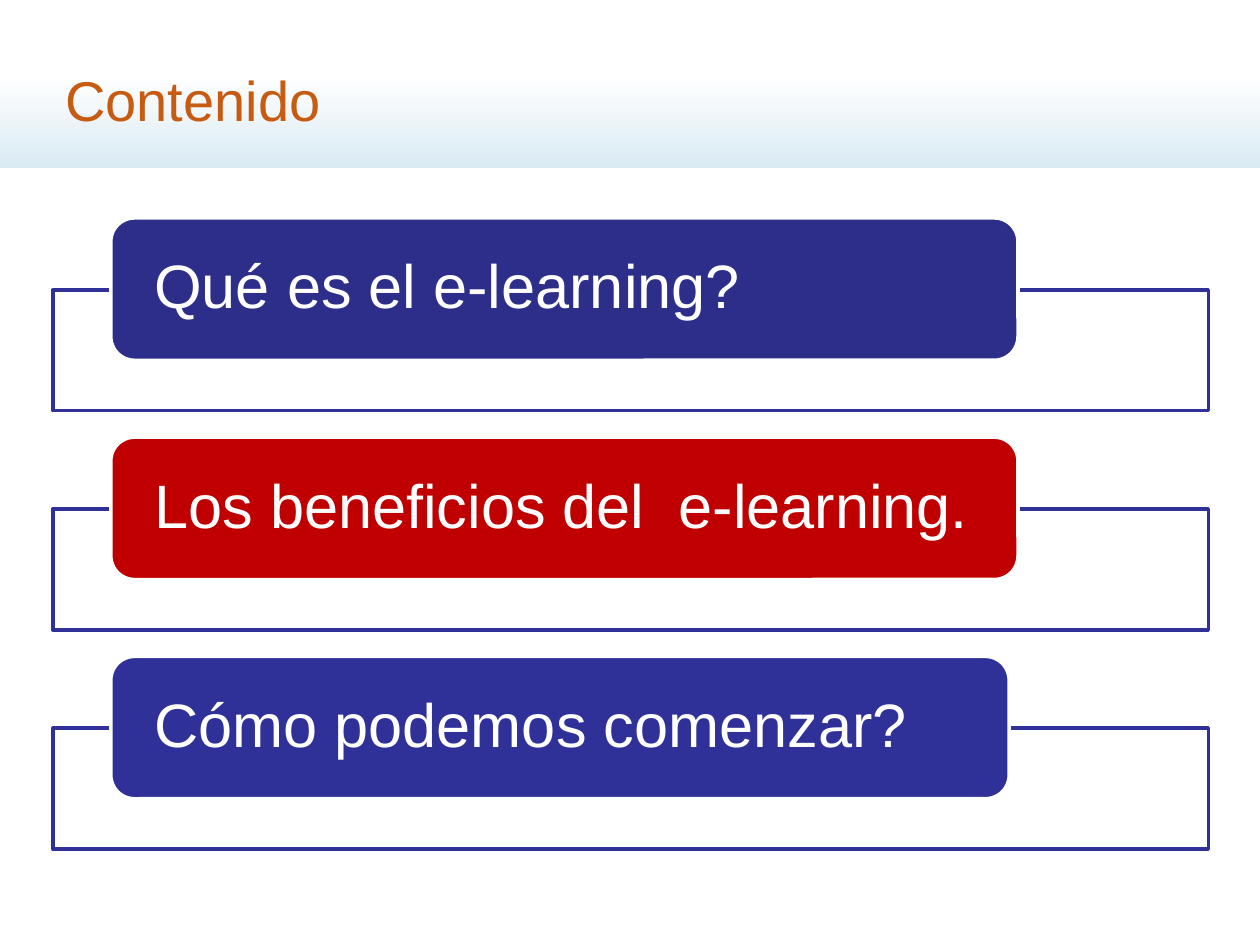
from pptx import Presentation
from pptx.dml.color import RGBColor
from pptx.enum.shapes import MSO_SHAPE
from pptx.enum.text import MSO_ANCHOR, PP_ALIGN
from pptx.util import Inches, Pt

RECT = MSO_SHAPE.RECTANGLE
ROUND = MSO_SHAPE.ROUNDED_RECTANGLE
MIDDLE = MSO_ANCHOR.MIDDLE
LEFT = PP_ALIGN.LEFT

WHITE = RGBColor(0xFF, 0xFF, 0xFF)
SKY = RGBColor(0xDA, 0xEB, 0xF3)
ORANGE = RGBColor(0xC7, 0x5B, 0x12)
NAVY = RGBColor(0x2D, 0x2D, 0x8A)
BLUE = RGBColor(0x30, 0x30, 0x99)
RED = RGBColor(0xC0, 0x00, 0x00)

TOPICS = [
    ("Qué es el e-learning?", NAVY, 7.2),
    ("Los beneficios del  e-learning.", RED, 7.2),
    ("Cómo podemos comenzar?", BLUE, 7.13),
]
TOP = 1.73
STEP = 1.74


class Deck:
    """Holds the style and the current slide, and draws each kind of element."""

    font = "Arial"

    def __init__(self, slide):
        self.shapes = slide.shapes

    def shape(self, kind, x, y, w, h):
        item = self.shapes.add_shape(kind, Inches(x), Inches(y), Inches(w), Inches(h))
        item.shadow.inherit = False
        return item

    def label(self, item, text, size, color, inset):
        frame = item.text_frame
        frame.word_wrap = True
        frame.vertical_anchor = MIDDLE
        frame.margin_left = frame.margin_right = Inches(inset)
        line = frame.paragraphs[0]
        line.text = text
        line.alignment = LEFT
        line.font.name = self.font
        line.font.size = Pt(size)
        line.font.color.rgb = color
        return line

    def band(self, x, y, w, h):
        item = self.shape(RECT, x, y, w, h)
        item.line.fill.background()
        item.fill.gradient()
        item.fill.gradient_angle = 270
        for stop, color, place in zip(item.fill.gradient_stops, (WHITE, SKY), (0, 1)):
            stop.color.rgb = color
            stop.position = place

    def title(self, text, x, y, w, h):
        item = self.shapes.add_textbox(Inches(x), Inches(y), Inches(w), Inches(h))
        self.label(item, text, 32, ORANGE, 0.1)

    def box(self, kind, x, y, w, h, fill, edge):
        item = self.shape(kind, x, y, w, h)
        item.fill.solid()
        item.fill.fore_color.rgb = fill
        item.line.color.rgb = edge
        item.line.width = Pt(2)
        return item

    def topic(self, text, color, y, w):
        self.box(RECT, 0.42, y + 0.57, 9.17, 0.96, WHITE, BLUE)
        pill = self.box(ROUND, 0.88, y, w, 1.13, color, WHITE)
        line = self.label(pill, text, 35, WHITE, 0.29)
        line.line_spacing = 0.9
        line.space_after = Pt(12.2)


def main():
    show = Presentation()
    show.slide_width = Inches(10)
    show.slide_height = Inches(7.5)
    deck = Deck(show.slides.add_slide(show.slide_layouts[6]))
    deck.band(0, 0.58, 10, 0.75)
    deck.title("Contenido", 0.42, 0.25, 9.17, 1.08)
    for row, (text, color, width) in enumerate(TOPICS):
        deck.topic(text, color, TOP + row * STEP, width)
    show.save("out.pptx")


if __name__ == "__main__":
    main()
